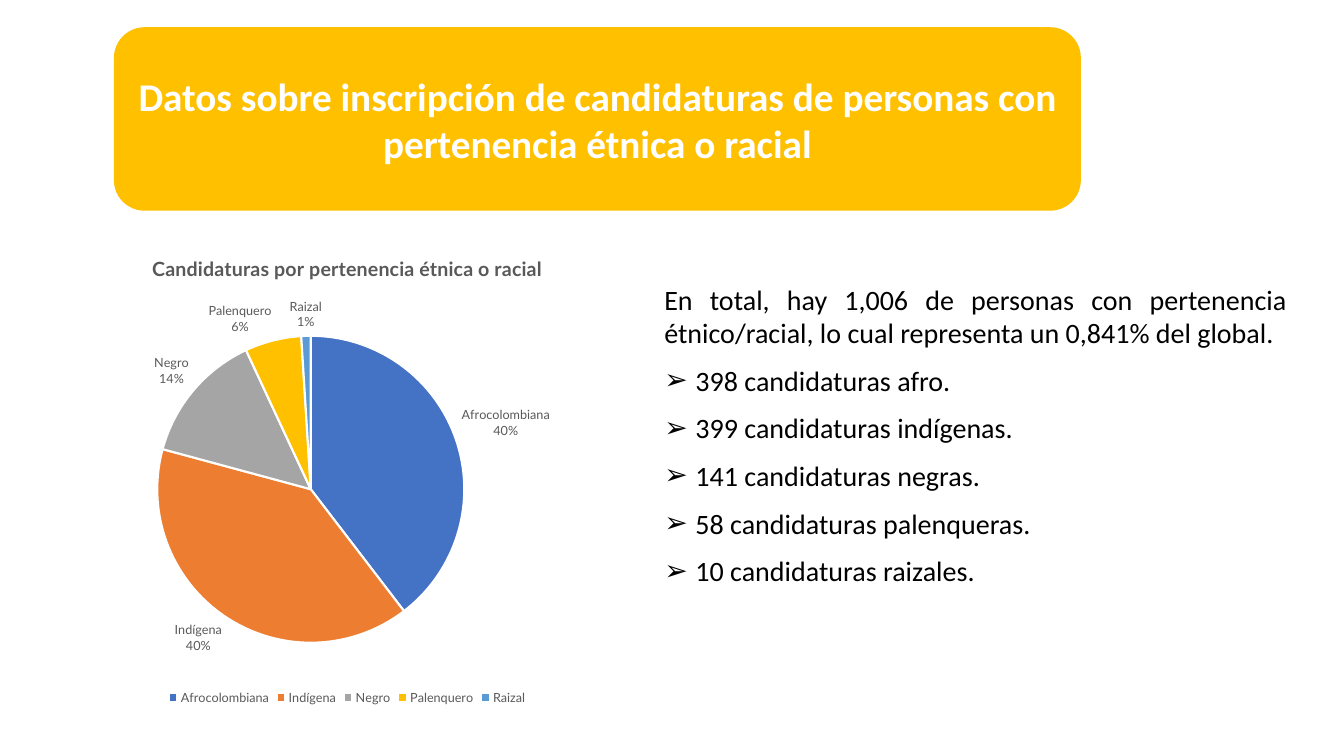
from dataclasses import dataclass

from lxml import etree
from pptx import Presentation
from pptx.chart.data import CategoryChartData
from pptx.dml.color import RGBColor
from pptx.enum.chart import XL_CHART_TYPE, XL_LABEL_POSITION, XL_LEGEND_POSITION
from pptx.enum.shapes import MSO_SHAPE
from pptx.enum.text import MSO_ANCHOR, MSO_AUTO_SIZE, PP_ALIGN
from pptx.oxml import parse_xml
from pptx.oxml.ns import nsdecls, qn
from pptx.util import Emu, Pt

PIE = XL_CHART_TYPE.PIE
OUTSIDE = XL_LABEL_POSITION.OUTSIDE_END
BOTTOM = XL_LEGEND_POSITION.BOTTOM
ROUNDED = MSO_SHAPE.ROUNDED_RECTANGLE
MIDDLE = MSO_ANCHOR.MIDDLE
FIT = MSO_AUTO_SIZE.SHAPE_TO_FIT_TEXT
CENTER, JUSTIFY = PP_ALIGN.CENTER, PP_ALIGN.JUSTIFY

PX = 9144  # 100 px to the inch
COLORS = {
    "white": "FFFFFF", "black": "000000", "gray": "595959", "gold": "FFC000",
    "blue": "4472C4", "orange": "ED7D31", "silver": "A5A5A5", "sky": "5B9BD5",
}
TEXT_FONT, CHART_FONT = "Calibri", "Lato"


@dataclass
class Box:
    left: int
    top: int
    width: int
    height: int

    def emu(self) -> tuple:
        return tuple(Emu(n * PX) for n in (self.left, self.top, self.width, self.height))


@dataclass
class Group:
    name: str
    share: int
    color: str
    count: int
    label: str


GROUPS = [
    Group("Afrocolombiana", 40, "blue", 398, "afro"),
    Group("Indígena", 40, "orange", 399, "indígenas"),
    Group("Negro", 14, "silver", 141, "negras"),
    Group("Palenquero", 6, "gold", 58, "palenqueras"),
    Group("Raizal", 1, "sky", 10, "raizales"),
]
TITLE = "Datos sobre inscripción de candidaturas de personas con pertenencia étnica o racial"
INTRO = ("En total, hay 1,006 de personas con pertenencia étnico/racial, "
         "lo cual representa un 0,841% del global.")
BANNER = Box(113, 27, 959, 182)
CHART = Box(-18, 234, 725, 470)
LIST = Box(649, 275, 637, 316)


def rgb(name: str) -> RGBColor:
    return RGBColor.from_string(COLORS[name])


def style(font, face: str, size: int, color: str, bold: bool = False) -> None:
    font.name, font.size, font.bold = face, Pt(size), bold
    font.color.rgb = rgb(color)


def add_title(slide, box: Box) -> None:
    banner = slide.shapes.add_shape(ROUNDED, *box.emu())
    banner.shadow.inherit = False
    banner.fill.solid()
    banner.fill.fore_color.rgb = rgb("gold")
    banner.line.fill.background()
    title = slide.shapes.title
    title.left, title.top, title.width, title.height = box.emu()
    title._element.addprevious(banner._element)
    frame = title.text_frame
    frame.word_wrap, frame.vertical_anchor = True, MIDDLE
    frame.auto_size = MSO_AUTO_SIZE.NONE
    para = frame.paragraphs[0]
    para.alignment, para.line_spacing = CENTER, 1.0
    run = para.add_run()
    run.text = TITLE
    style(run.font, TEXT_FONT, 28, "white", True)


def set_bullet(para) -> None:
    props = para._p.get_or_add_pPr()
    indent = 31 * PX
    props.set("marL", str(indent))
    props.set("indent", str(-indent))
    etree.SubElement(props, qn("a:buFont")).set("typeface", "Arial")
    etree.SubElement(props, qn("a:buChar")).set("char", "➢")


def add_list(slide, box: Box) -> None:
    frame = slide.shapes.add_textbox(*box.emu()).text_frame
    frame.word_wrap, frame.auto_size = True, FIT
    lines = [INTRO] + [f"{g.count} candidaturas {g.label}." for g in GROUPS]
    for i, line in enumerate(lines):
        para = frame.add_paragraph() if i else frame.paragraphs[0]
        para.alignment = JUSTIFY
        para.space_before, para.space_after = Pt(5 if i else 0), Pt(5)
        if i:
            set_bullet(para)
        run = para.add_run()
        run.text = line
        style(run.font, TEXT_FONT, 20, "black")


def place_plot(chart, x: float, y: float, w: float, h: float) -> None:
    """Fix the inner plot area, in fractions of the chart."""
    area = chart._chartSpace.chart.plotArea
    for old in area.findall(qn("c:layout")):
        area.remove(old)
    sides = "".join(f'<c:{k} val="{v}"/>' for k, v in zip("xywh", (x, y, w, h)))
    area.insert(0, parse_xml(
        f'<c:layout {nsdecls("c")}><c:manualLayout><c:layoutTarget val="inner"/>'
        f'<c:xMode val="edge"/><c:yMode val="edge"/>{sides}</c:manualLayout></c:layout>'))


def add_pie(slide, box: Box) -> None:
    data = CategoryChartData()
    data.categories = [g.name for g in GROUPS]
    data.add_series("Series 1", [g.share for g in GROUPS])
    chart = slide.shapes.add_chart(PIE, *box.emu(), data).chart
    style(chart.font, CHART_FONT, 10, "black")

    chart.has_title = True
    run = chart.chart_title.text_frame.paragraphs[0].add_run()
    run.text = "Candidaturas por pertenencia étnica o racial"
    style(run.font, CHART_FONT, 14, "gray", True)
    chart.chart_title.include_in_layout = False

    chart.has_legend = True
    chart.legend.position = BOTTOM
    chart.legend.include_in_layout = False
    style(chart.legend.font, CHART_FONT, 9, "gray")

    plot = chart.plots[0]
    plot.vary_by_categories = True
    series = plot.series[0]
    for i, group in enumerate(GROUPS):
        part = series.points[i].format
        part.fill.solid()
        part.fill.fore_color.rgb = rgb(group.color)
        part.line.color.rgb = rgb("white")
        part.line.width = Pt(1.5)

    labels = series.data_labels
    style(labels.font, CHART_FONT, 9, "gray")
    labels.show_value = False
    labels.show_category_name = labels.show_percentage = True
    labels.position = OUTSIDE
    mark = parse_xml(f'<c:separator {nsdecls("c")}>\n</c:separator>')
    labels._element.find(qn("c:showBubbleSize")).addnext(mark)
    place_plot(chart, 0.24, 0.21, 0.42, 0.65)


def main() -> None:
    deck = Presentation()
    deck.slide_width, deck.slide_height = Emu(1333 * PX), Emu(750 * PX)
    slide = deck.slides.add_slide(deck.slide_layouts[5])
    add_title(slide, BANNER)
    add_list(slide, LIST)
    add_pie(slide, CHART)
    deck.save("out.pptx")


if __name__ == "__main__":
    main()
